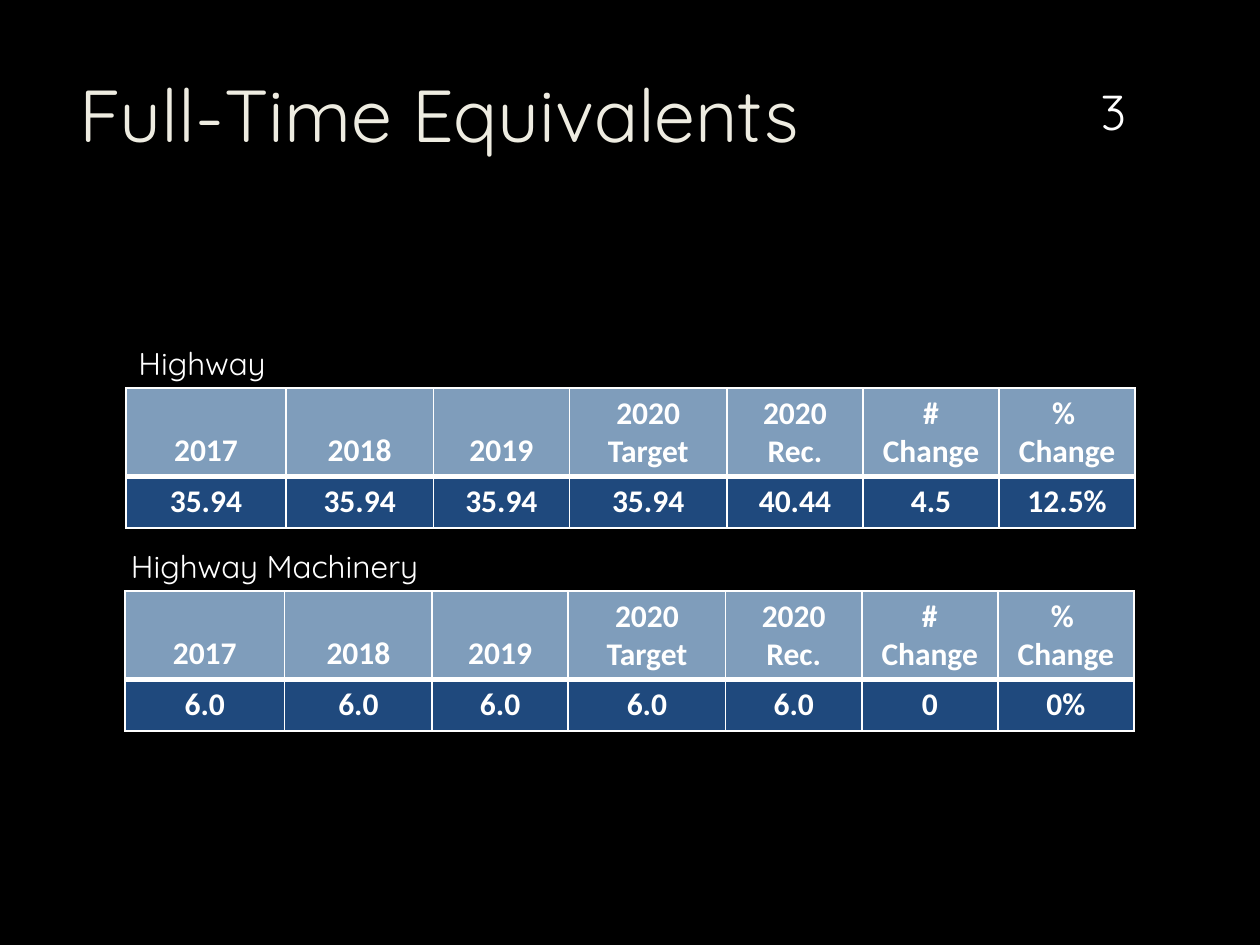
from dataclasses import dataclass

from lxml import etree
from pptx import Presentation
from pptx.dml.color import RGBColor
from pptx.enum import text as t
from pptx.oxml import ns
from pptx.util import Inches, Pt


@dataclass(frozen=True)
class Theme:
    back: str = "000000"
    cream: str = "EEECE1"
    white: str = "FFFFFF"
    head: str = "7F9DBB"
    body: str = "1F497D"
    sans: str = "Quicksand"
    grid: str = "Calibri"
    title: int = 42
    number: int = 28
    text: int = 18
    thin: int = 1
    thick: int = 3


THEME = Theme()
HEADS = ["2017", "2018", "2019", "2020 Target", "2020\nRec.", "#\nChange", "% \nChange"]
WIDTHS = [1.27, 1.17, 1.08, 1.25, 1.08, 1.08, 1.08]
HEIGHTS = [0.7, 0.41]
HIGHWAY = ["35.94", "35.94", "35.94", "35.94", "40.44", "4.5", "12.5%"]
MACHINES = ["6.0", "6.0", "6.0", "6.0", "6.0", "0", "0%"]


def write(frame, words, size, color=THEME.white, face=THEME.sans, bold=False,
          align=t.PP_ALIGN.LEFT):
    frame.text = words
    style = {"size": Pt(size), "name": face, "bold": bold}
    for para in frame.paragraphs:
        para.alignment = align
        for run in para.runs:
            for key, value in style.items():
                setattr(run.font, key, value)
            run.font.color.rgb = RGBColor.from_string(color)


def add_title(slide, words):
    title = slide.shapes.title
    place = {"left": 0.53, "top": 0.5, "width": 7.72, "height": 1.53}
    for key, value in place.items():
        setattr(title, key, Inches(value))
    frame = title.text_frame
    frame.vertical_anchor = t.MSO_ANCHOR.TOP
    frame.auto_size = t.MSO_AUTO_SIZE.NONE
    write(frame, words, THEME.title, THEME.cream)


def add_number(slide, words):
    box = slide.shapes.add_textbox(Inches(8.49), Inches(0.32), Inches(0.69), Inches(0.84))
    frame = box.text_frame
    frame.word_wrap = True
    frame.vertical_anchor = t.MSO_ANCHOR.BOTTOM
    write(frame, words, THEME.number, align=t.PP_ALIGN.CENTER)


def add_label(slide, words, left, top, width):
    box = slide.shapes.add_textbox(Inches(left), Inches(top), Inches(width), Inches(0.4))
    frame = box.text_frame
    frame.word_wrap = False
    frame.auto_size = t.MSO_AUTO_SIZE.SHAPE_TO_FIT_TEXT
    write(frame, words, THEME.text)


def add_edges(cell, **sides):
    """Draw white cell borders; sides maps L, R, T and B to points."""
    props = cell._tc.get_or_add_tcPr()
    for spot, side in enumerate("LRTB"):
        line = etree.Element(ns.qn(f"a:ln{side}"), w=str(Pt(sides.get(side, THEME.thin))))
        fill = etree.SubElement(line, ns.qn("a:solidFill"))
        etree.SubElement(fill, ns.qn("a:srgbClr"), val=THEME.white)
        props.insert(spot, line)


def add_grid(slide, left, top, values):
    shape = slide.shapes.add_table(2, len(HEADS), Inches(left), Inches(top),
                                   Inches(sum(WIDTHS)), Inches(sum(HEIGHTS)))
    table = shape.table
    for column, width in zip(table.columns, WIDTHS):
        column.width = Inches(width)
    looks = [(HEADS, THEME.head, t.MSO_ANCHOR.BOTTOM, "B"),
             (values, THEME.body, t.MSO_ANCHOR.TOP, "T")]
    for row, height, (words, color, anchor, edge) in zip(table.rows, HEIGHTS, looks):
        row.height = Inches(height)
        for cell, word in zip(row.cells, words):
            cell.fill.solid()
            cell.fill.fore_color.rgb = RGBColor.from_string(color)
            cell.vertical_anchor = anchor
            add_edges(cell, **{edge: THEME.thick})
            write(cell.text_frame, word, THEME.text, face=THEME.grid, bold=True,
                  align=t.PP_ALIGN.CENTER)


def main():
    deck = Presentation()
    deck.slide_width, deck.slide_height = Inches(10), Inches(7.5)
    slide = deck.slides.add_slide(deck.slide_layouts[5])
    slide.background.fill.solid()
    slide.background.fill.fore_color.rgb = RGBColor.from_string(THEME.back)
    add_title(slide, "Full-Time Equivalents")
    add_number(slide, "3")
    add_label(slide, "Highway", 1, 2.68, 1.27)
    add_grid(slide, 1, 3.08, HIGHWAY)
    add_label(slide, "Highway Machinery", 0.94, 4.29, 2.65)
    add_grid(slide, 0.99, 4.69, MACHINES)
    deck.save("out.pptx")


if __name__ == "__main__":
    main()
